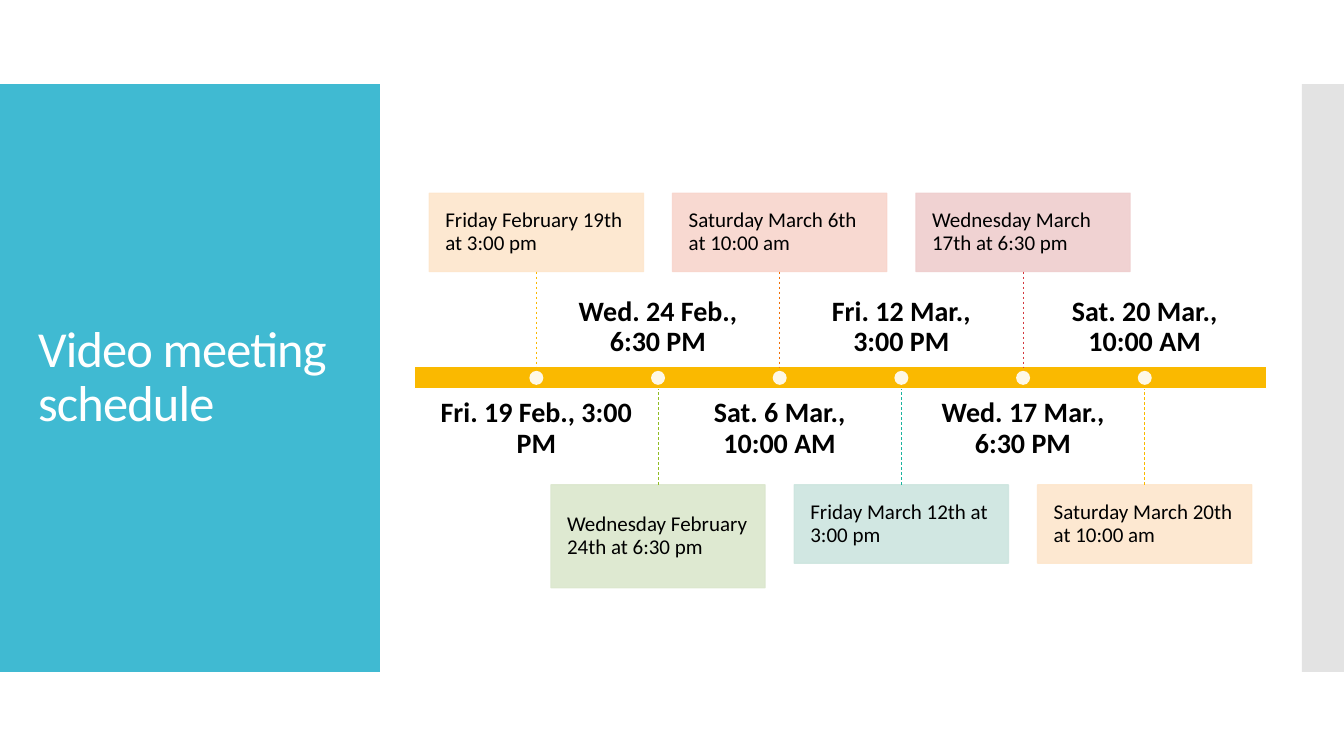
from collections import namedtuple

from lxml import etree
from pptx import Presentation
from pptx.dml.color import RGBColor
from pptx.enum.dml import MSO_LINE
from pptx.enum.shapes import MSO_CONNECTOR, MSO_SHAPE
from pptx.enum.text import MSO_ANCHOR, MSO_AUTO_SIZE, PP_ALIGN
from pptx.oxml.ns import qn
from pptx.util import Pt

RECTANGLE, OVAL = MSO_SHAPE.RECTANGLE, MSO_SHAPE.OVAL
STRAIGHT, DASH = MSO_CONNECTOR.STRAIGHT, MSO_LINE.DASH
TOP, MIDDLE, BOTTOM = MSO_ANCHOR.TOP, MSO_ANCHOR.MIDDLE, MSO_ANCHOR.BOTTOM
LEFT, CENTER = PP_ALIGN.LEFT, PP_ALIGN.CENTER
NO_AUTOFIT = MSO_AUTO_SIZE.NONE
TOP_SIDE, BOTTOM_SIDE = 0, 2

Box = namedtuple("Box", "left top width height")
Meeting = namedtuple("Meeting", "label detail card_color line_color card_height")

MEETINGS = [
    Meeting("Fri. 19 Feb., 3:00 PM", "Friday February 19th at 3:00 pm", "FDE6CC", "FAB900", 56),
    Meeting("Wed. 24 Feb., 6:30 PM", "Wednesday February 24th at 6:30 pm", "DBE7CD", "90BB23", 73.5),
    Meeting("Sat. 6 Mar., 10:00 AM", "Saturday March 6th at 10:00 am", "F8D5CC", "EE7008", 56),
    Meeting("Fri. 12 Mar., 3:00 PM", "Friday March 12th at 3:00 pm", "CDE5DF", "1AB39F", 56),
    Meeting("Wed. 17 Mar., 6:30 PM", "Wednesday March 17th at 6:30 pm", "EFCECE", "D5393D", 56),
    Meeting("Sat. 20 Mar., 10:00 AM", "Saturday March 20th at 10:00 am", "FDE6CC", "FAB900", 56),
]


def color(value):
    return RGBColor.from_string(value)


def points(box):
    return [Pt(length) for length in box]


def add_block(page, kind, box, fill, outline=None, opacity=100):
    shape = page.shapes.add_shape(kind, *points(box))
    shape.shadow.inherit = False
    shape.fill.solid()
    shape.fill.fore_color.rgb = color(fill)
    if outline:
        shape.line.color.rgb = color(outline)
        shape.line.width = Pt(0.85)
    else:
        shape.line.fill.background()
    if opacity < 100:
        for paint in shape._element.spPr.iter(qn("a:srgbClr")):
            etree.SubElement(paint, qn("a:alpha")).set("val", str(opacity * 1000))
    return shape


def set_frame(frame, anchor, inset):
    frame.word_wrap = True
    frame.auto_size = NO_AUTOFIT
    frame.vertical_anchor = anchor
    frame.margin_left = frame.margin_right = Pt(inset)
    frame.margin_top = frame.margin_bottom = Pt(inset)


def add_span(para, text, size, ink, bold=False):
    span = para.add_run()
    span.text = text
    span.font.name = "Calibri"
    span.font.size = Pt(size)
    span.font.bold = bold
    span.font.color.rgb = color(ink)
    return span


def write(frame, text, size, align, bold=False):
    para = frame.paragraphs[0]
    para.alignment = align
    para.line_spacing = 0.9
    add_span(para, text, size, "000000", bold)


def add_title_panel(page, box):
    add_block(page, RECTANGLE, box, "40BAD2")
    title = page.shapes.title
    title.left, title.top, title.width, title.height = points(
        Box(box.left + 20, box.top + 29, box.width - 39.5, box.height - 58))
    frame = title.text_frame
    set_frame(frame, MIDDLE, 7.2)
    para = frame.paragraphs[0]
    para.alignment = LEFT
    para.line_spacing = 0.9
    for index, text in enumerate(["Video meeting ", "schedule"]):
        if index:
            para.add_line_break()
        span = add_span(para, text, 36, "FFFFFF")
        span.font._element.set("spc", "-60")
    page.shapes._spTree.append(title._element)


def add_label(page, box, text, anchor):
    label = page.shapes.add_textbox(*points(box))
    set_frame(label.text_frame, anchor, 0)
    write(label.text_frame, text, 20, CENTER, True)


def add_card(page, box, meeting):
    card = add_block(page, RECTANGLE, box, meeting.card_color, meeting.card_color, 90)
    set_frame(card.text_frame, MIDDLE, 11.5)
    write(card.text_frame, meeting.detail, 15, LEFT)
    return card


def add_stem(page, card, side, center, bar_edge, ink):
    stem = page.shapes.add_connector(STRAIGHT, Pt(center), Pt(bar_edge), Pt(center), Pt(bar_edge))
    stem.begin_connect(card, side)
    stem.line.color.rgb = color(ink)
    stem.line.width = Pt(0.5)
    stem.line.dash_style = DASH
    etree.SubElement(stem._element.spPr, qn("a:effectLst"))


def add_timeline(page, box):
    step = box.width / 7
    bar = Box(box.left, box.top + 124, box.width, 15.8)
    bar_bottom = bar.top + bar.height
    card_width, label_width, label_height, dot = 153, 139, 45.4, 10
    add_block(page, RECTANGLE, bar, "FAB900", "FFFFFF")
    for index, meeting in enumerate(MEETINGS):
        center = box.left + step * (index + 1)
        card_left, label_left = center - card_width / 2, center - label_width / 2
        if index % 2 == 0:
            card_top, side, bar_edge = box.top, BOTTOM_SIDE, bar.top
            label_top, anchor = bar_bottom + 7, TOP
        else:
            card_top, side, bar_edge = bar_bottom + 68.5, TOP_SIDE, bar_bottom
            label_top, anchor = bar.top - 6.5 - label_height, BOTTOM
        add_label(page, Box(label_left, label_top, label_width, label_height), meeting.label, anchor)
        card = add_card(page, Box(card_left, card_top, card_width, meeting.card_height), meeting)
        add_stem(page, card, side, center, bar_edge, meeting.line_color)
        dot_top = bar.top + (bar.height - dot) / 2
        add_block(page, OVAL, Box(center - dot / 2, dot_top, dot, dot), "FFFFFF", opacity=90)


def add_edge_strip(page, box):
    add_block(page, RECTANGLE, box, "C8C8C8", opacity=50)


def main():
    deck = Presentation()
    deck.slide_width, deck.slide_height = Pt(960), Pt(540)
    page = deck.slides.add_slide(deck.slide_layouts[5])
    add_edge_strip(page, Box(930, 60, 30, 420))
    add_title_panel(page, Box(0, 60, 271.3, 420))
    add_timeline(page, Box(296.2, 138, 608.4, 282))
    deck.save("out.pptx")


if __name__ == "__main__":
    main()
